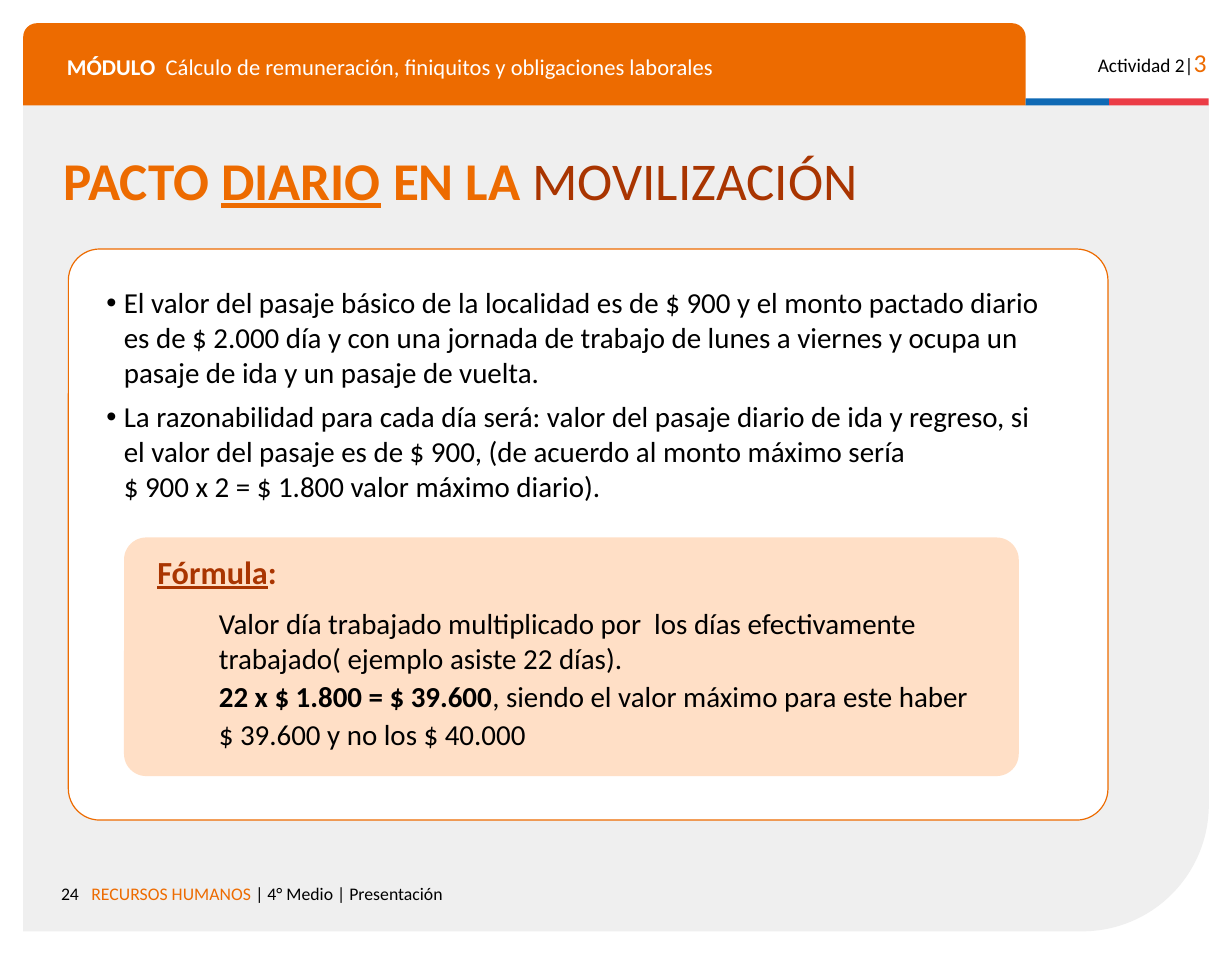
from lxml.etree import SubElement
from pptx import Presentation
from pptx.dml.color import RGBColor
from pptx.enum.shapes import MSO_SHAPE
from pptx.enum.text import MSO_ANCHOR, PP_ALIGN
from pptx.oxml.ns import qn
from pptx.util import Inches, Pt

COLORS = {"orange": "ED6B00", "rust": "A93501", "peach": "FFB375", "grey": "EFEFEF",
          "blue": "0F69B4", "red": "EB3C46", "black": "000000", "white": "FFFFFF"}

# A span is (text, size, color, style); style holds b for bold, u for underline.
TITLE = [[("PACTO ", 33, "orange", "b"), ("DIARIO", 33, "orange", "bu"),
          (" EN LA ", 33, "orange", "b"), ("MOVILIZACIÓN", 33, "rust", "")]]
MODULE = [[("MÓDULO  ", 14, "white", "b"),
           ("Cálculo de remuneración, finiquitos y obligaciones laborales", 14, "white", "")]]
ACTIVITY = [[("Actividad 2|", 12, "black", ""), ("3", 16, "orange", "")]]
PAGE_NUMBER = [[("24", 11, "black", "")]]
FOOTER = [[("RECURSOS HUMANOS ", 11, "orange", ""),
           ("| 4° Medio | Presentación", 11, "black", "")]]
BULLETS = [
    [("El valor del pasaje básico de la localidad es de $ 900 y el monto pactado diario "
      "es de $ 2.000 día y con una jornada de trabajo de lunes a viernes y ocupa un "
      "pasaje de ida y un pasaje de vuelta.", 18, "black", "")],
    [("La razonabilidad para cada día será: valor del pasaje diario de ida y regreso, si "
      "el valor del pasaje es de $ 900, (de acuerdo al monto máximo sería\n"
      "$ 900 x 2 = $ 1.800 valor máximo diario).", 18, "black", "")],
]
FORMULA_LABEL = [[("Fórmula", 20, "rust", "bu"), (":", 20, "rust", "b")]]
FORMULA = [
    [("Valor día trabajado multiplicado por  los días efectivamente "
      "trabajado( ejemplo asiste 22 días).", 18, "black", "")],
    [("22 x $ 1.800 = $ 39.600", 18, "black", "b"),
     (", siendo el valor máximo para este haber", 18, "black", "")],
    [("$ 39.600 y no los $ 40.000", 18, "black", "")],
]

# Panel edges and header
LEFT, RIGHT, TOP, HEADER_BOTTOM, BOTTOM = 0.2, 10.43, 0.2, 0.9, 8.04
HEADER_RIGHT, STRIPE_SPLIT, STRIPE_HEIGHT = 8.85, 9.57, 0.06


def color(name):
    return RGBColor.from_string(COLORS[name])


def add_panel(page, kind, left, top, width, height, fill, adjustments=(), line=None):
    panel = page.shapes.add_shape(kind, Inches(left), Inches(top), Inches(width), Inches(height))
    panel.shadow.inherit = False
    panel.fill.solid()
    panel.fill.fore_color.rgb = color(fill)
    for index, value in enumerate(adjustments):
        panel.adjustments[index] = value
    if line:
        panel.line.color.rgb = color(line)
        panel.line.width = Pt(0.75)
    else:
        panel.line.fill.background()
    return panel


def write(frame, paragraphs, inset=0.05, align=PP_ALIGN.LEFT, before=0, spacing=1.0):
    """Fill a text frame with paragraphs of spans; a newline is a line break."""
    frame.word_wrap = True
    frame.vertical_anchor = MSO_ANCHOR.TOP
    frame.margin_left = frame.margin_right = Inches(0.1)
    frame.margin_top = frame.margin_bottom = Inches(inset)
    for index, spans in enumerate(paragraphs):
        para = frame.add_paragraph() if index else frame.paragraphs[0]
        para.alignment = align
        para.space_before = Pt(before)
        para.line_spacing = spacing
        for text, size, tint, style in spans:
            for number, line in enumerate(text.split("\n")):
                if number:
                    para.add_line_break()
                span = para.add_run()
                span.text = line
                span.font.name = "Calibri"
                span.font.size = Pt(size)
                span.font.color.rgb = color(tint)
                span.font.bold = "b" in style
                span.font.underline = "u" in style


def add_text(page, left, top, width, height, paragraphs, **options):
    box = page.shapes.add_textbox(Inches(left), Inches(top), Inches(width), Inches(height))
    write(box.text_frame, paragraphs, **options)
    return box


def add_bullets(frame):
    for para in frame.paragraphs:
        properties = para._p.get_or_add_pPr()
        properties.set("marL", str(Inches(0.15)))
        properties.set("indent", str(-Inches(0.15)))
        SubElement(properties, qn("a:buFont"), typeface="Arial")
        SubElement(properties, qn("a:buChar"), char="•")


def add_background(page):
    width, height = RIGHT - LEFT, BOTTOM - HEADER_BOTTOM
    # A quarter turn brings the rounded corner to the bottom right.
    shift = (width - height) / 2
    sheet = add_panel(page, MSO_SHAPE.ROUND_1_RECTANGLE, LEFT + shift, HEADER_BOTTOM - shift,
                      height, width, "grey", [0.153])
    sheet.rotation = 90
    add_panel(page, MSO_SHAPE.ROUND_2_SAME_RECTANGLE, LEFT, TOP, HEADER_RIGHT - LEFT,
              HEADER_BOTTOM - TOP + 0.01, "orange", [0.167, 0])
    for start, end, fill in [(HEADER_RIGHT, STRIPE_SPLIT, "blue"), (STRIPE_SPLIT, RIGHT, "red")]:
        add_panel(page, MSO_SHAPE.RECTANGLE, start, HEADER_BOTTOM - STRIPE_HEIGHT + 0.01,
                  end - start, STRIPE_HEIGHT, fill)


def add_title(page):
    title = page.shapes.title
    title.left, title.top, title.width, title.height = map(Inches, (0.45, 1.22, 9.89, 0.66))
    write(title.text_frame, TITLE)
    title.element.getparent().append(title.element)  # in front of the background


def add_formula(page):
    card = add_panel(page, MSO_SHAPE.ROUNDED_RECTANGLE, 1.07, 4.64, 7.72, 2.06, "peach", [0.093])
    tint = card.element.spPr.find(qn("a:solidFill"))[0]
    SubElement(tint, qn("a:alpha"), val="41000")
    add_text(page, 1.26, 4.72, 1.24, 0.44, FORMULA_LABEL)
    add_text(page, 1.79, 5.18, 6.7, 1.4, FORMULA, before=2)


def main():
    deck = Presentation()
    deck.slide_width, deck.slide_height = Inches(10.63), Inches(8.27)
    page = deck.slides.add_slide(deck.slide_layouts[5])
    add_background(page)
    add_text(page, 0.2, 7.53, 0.58, 0.29, PAGE_NUMBER, inset=0.1, align=PP_ALIGN.RIGHT)
    add_text(page, 0.69, 7.53, 7.14, 0.38, FOOTER, inset=0.1)
    add_text(page, 0.48, 0.38, 8.14, 0.35, MODULE, inset=0.1, spacing=0.9)
    add_text(page, 9.23, 0.3, 1.28, 0.38, ACTIVITY, inset=0.1, align=PP_ALIGN.RIGHT)
    add_panel(page, MSO_SHAPE.ROUNDED_RECTANGLE, 0.59, 2.15, 8.97, 4.93, "white", [0.055], "orange")
    add_title(page)
    add_bullets(add_text(page, 0.82, 2.41, 8.31, 2, BULLETS, before=6).text_frame)
    add_formula(page)
    deck.save("out.pptx")


if __name__ == "__main__":
    main()
